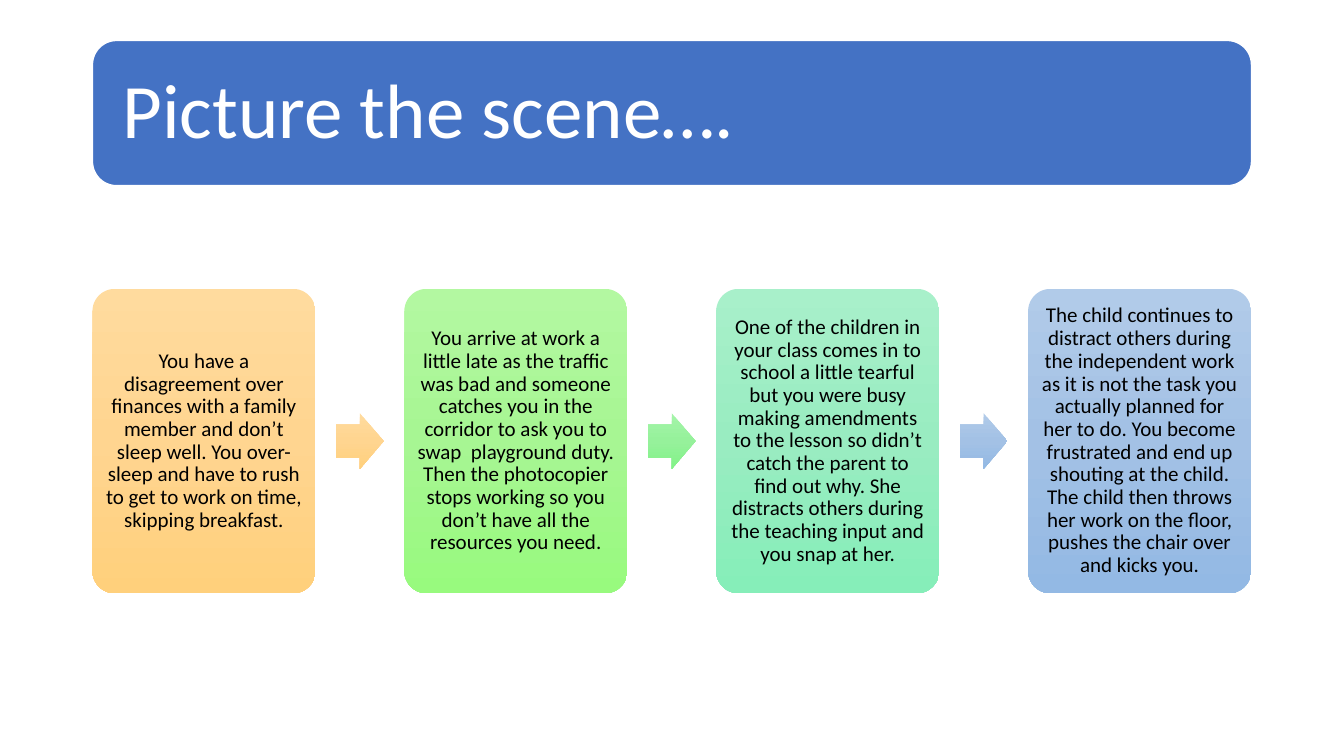
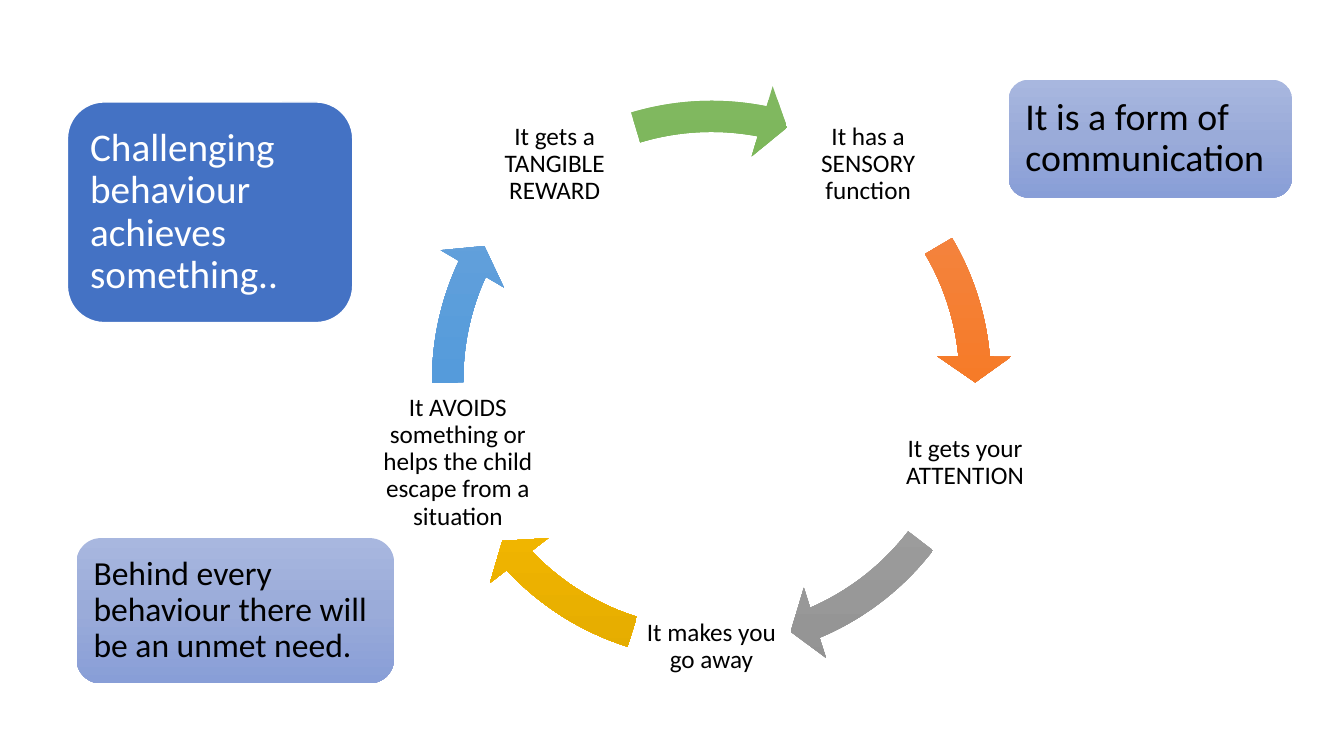
from dataclasses import dataclass
from math import cos, radians, sin

from lxml.etree import SubElement
from pptx import Presentation
from pptx.dml.color import RGBColor
from pptx.enum.shapes import MSO_SHAPE as Preset
from pptx.enum.text import MSO_ANCHOR as Anchor, MSO_AUTO_SIZE as AutoSize, PP_ALIGN as Align
from pptx.oxml.ns import qn
from pptx.util import Cm, Pt


@dataclass(frozen=True)
class Theme:
    font: str = "Calibri"
    text: str = "000000"
    light: str = "FFFFFF"
    band: str = "4472C4"
    note: tuple = ("A8B7DF", "9AABD9", "889ED7")
    orange: tuple = ("FFDB9E", "FFD590", "FFD07C")
    lime: tuple = ("B3F8A1", "A7F693", "98FA7E")
    green: tuple = ("A4F4A9", "96F19B", "82F388")
    mint: tuple = ("A8F0CA", "99ECC1", "86EEB9")
    blue: tuple = ("B1CBE9", "A3C1E5", "93B9E4")
    cycle_orange: tuple = ("F18C57", "F67B28", "E56C19")
    cycle_grey: tuple = ("AFAFAF", "A5A5A5", "939393")
    cycle_gold: tuple = ("FFC64B", "FFC000", "E3AB00")
    cycle_blue: tuple = ("71A6DB", "559BDB", "448ACA")
    cycle_green: tuple = ("81B861", "6FB242", "62A336")
    card_size: int = 15
    label_size: int = 18


THEME = Theme()
CORNER_INSET = 0.0488  # text inset of a rounded rectangle, as a share of its short side

STORY = [  # text, card colours, colours of the arrow that follows
    ("You have a disagreement over finances with a family member and don’t sleep well. "
     "You over-sleep and have to rush to get to work on time, skipping breakfast.",
     THEME.orange, THEME.orange),
    ("You arrive at work a little late as the traffic was bad and someone catches you in "
     "the corridor to ask you to swap  playground duty. Then the photocopier stops working "
     "so you don’t have all the resources you need.",
     THEME.lime, THEME.green),
    ("One of the children in your class comes in to school a little tearful but you were "
     "busy making amendments to the lesson so didn’t catch the parent to find out why. "
     "She distracts others during the teaching input and you snap at her.",
     THEME.mint, THEME.blue),
    ("The child continues to distract others during the independent work as it is not the "
     "task you actually planned for her to do. You become frustrated and end up shouting at "
     "the child. The child then throws her work on the floor, pushes the chair over and "
     "kicks you.",
     THEME.blue, None),
]

FUNCTIONS = [  # label, arrow colours, start and end angle of the arrow that follows
    ("It has a SENSORY function", THEME.cycle_orange, 329.44, 354.88),
    ("It gets your ATTENTION", THEME.cycle_grey, 37.56, 66.91),
    ("It makes you go away", THEME.cycle_gold, 107.49, 136.84),
    ("It AVOIDS something or helps the child escape from a situation",
     THEME.cycle_blue, 179.52, 204.96),
    ("It gets a TANGIBLE REWARD", THEME.cycle_green, 253.31, 281.09),
]


def write_text(frame, text, *, size, color=THEME.text, align=Align.LEFT, inset=0.0):
    frame.word_wrap = True
    frame.auto_size = AutoSize.NONE
    frame.vertical_anchor = Anchor.MIDDLE
    frame.margin_left = frame.margin_right = Cm(inset)
    frame.margin_top = frame.margin_bottom = Cm(inset)
    para = frame.paragraphs[0]
    para.alignment = align
    para.line_spacing = 0.9
    para.space_before = Pt(0)
    span = para.add_run()
    span.text = text
    span.font.name = THEME.font
    span.font.size = Pt(size)
    span.font.color.rgb = RGBColor.from_string(color)


def fill_gradient(shape, colors):
    """Fill from top to bottom with evenly spaced colours."""
    shape.fill.gradient()
    shape.fill.gradient_angle = 270
    stops = shape.element.spPr.find(qn("a:gradFill")).find(qn("a:gsLst"))
    for stop in list(stops):
        stops.remove(stop)
    for index, color in enumerate(colors):
        position = 100000 * index // (len(colors) - 1)
        stop = SubElement(stops, qn("a:gs"), pos=str(position))
        SubElement(stop, qn("a:srgbClr"), val=color)


def add_shape(page, preset, box, fill, adjustments=()):
    """Add a shape; fill is one colour or a tuple of gradient colours."""
    shape = page.shapes.add_shape(preset, *map(Cm, box))
    shape.shadow.inherit = False
    for index, value in enumerate(adjustments):
        shape.adjustments[index] = value
    if isinstance(fill, tuple):
        fill_gradient(shape, fill)
    else:
        shape.fill.solid()
        shape.fill.fore_color.rgb = RGBColor.from_string(fill)
    shape.line.fill.background()
    return shape


def add_title_band(page, text, box, *, size, inset):
    """Draw the blue band and lay the title placeholder over it."""
    band = add_shape(page, Preset.ROUNDED_RECTANGLE, box, THEME.band)
    band.line.color.rgb = RGBColor.from_string(THEME.light)
    band.line.width = Pt(1)
    left, top, width, height = box
    pad = CORNER_INSET * min(width, height)
    title = page.shapes.title
    title.left, title.top = Cm(left + pad), Cm(top + pad)
    title.width, title.height = Cm(width - 2 * pad), Cm(height - 2 * pad)
    write_text(title.text_frame, text, size=size, color=THEME.light, inset=inset)
    band.element.addnext(title.element)


def add_note(page, text, box, *, size, inset):
    note = add_shape(page, Preset.ROUNDED_RECTANGLE, box, THEME.note)
    write_text(note.text_frame, text, size=size, inset=inset)


def add_story(page):
    """Add a row of cards with an arrow in each gap."""
    left, top, width, height, pitch = 2.33, 7.28, 5.62, 7.67, 7.86
    arrow_width, arrow_height = 1.2, 1.4
    arrow_offset = (width + pitch - arrow_width) / 2
    arrow_top = top + (height - arrow_height) / 2
    for index, (text, card_fill, arrow_fill) in enumerate(STORY):
        x = left + index * pitch
        card = add_shape(page, Preset.ROUNDED_RECTANGLE, (x, top, width, height),
                         card_fill, [0.1])
        write_text(card.text_frame, text, size=THEME.card_size,
                   align=Align.CENTER, inset=0.15)
        if arrow_fill:
            box = (x + arrow_offset, arrow_top, arrow_width, arrow_height)
            add_shape(page, Preset.RIGHT_ARROW, box, arrow_fill, [0.6, 0.5])


def add_cycle(page):
    """Add labels around a circle, each followed by a curved arrow."""
    center_x, center_y, radius = 17.93, 9.58, 6.72
    diameter, side = 15.14, 4.04
    ring = (center_x - diameter / 2, center_y - diameter / 2, diameter, diameter)
    step = 360 / len(FUNCTIONS)
    for index, (text, fill, start, end) in enumerate(FUNCTIONS):
        angle = radians(-54 + index * step)
        x = center_x + radius * cos(angle) - side / 2
        y = center_y + radius * sin(angle) - side / 2
        label = page.shapes.add_textbox(Cm(x), Cm(y), Cm(side), Cm(side))
        write_text(label.text_frame, text, size=THEME.label_size,
                   align=Align.CENTER, inset=0.08)
        # An adjustment of 0.6 is one degree.
        add_shape(page, Preset.CIRCULAR_ARROW, ring, fill,
                  [0.052, 5.6 * 0.6, end * 0.6, start * 0.6, 0.061])


def main():
    deck = Presentation()
    deck.slide_width, deck.slide_height = Cm(33.87), Cm(19.05)
    title_only = deck.slide_layouts[5]

    page = deck.slides.add_slide(title_only)
    add_title_band(page, "Picture the scene….", (2.33, 1.02, 29.21, 3.66),
                   size=55, inset=0.58)
    add_story(page)

    page = deck.slides.add_slide(title_only)
    add_cycle(page)
    add_title_band(page, "Challenging behaviour achieves something..",
                   (1.7, 2.57, 7.19, 5.56), size=28, inset=0.3)
    add_note(page, "It is a form of communication", (25.42, 2.01, 7.14, 2.97),
             size=27, inset=0.28)
    add_note(page, "Behind every behaviour there will be an unmet need.",
             (1.93, 13.56, 8.0, 3.66), size=24, inset=0.25)

    deck.save("out.pptx")


if __name__ == "__main__":
    main()
